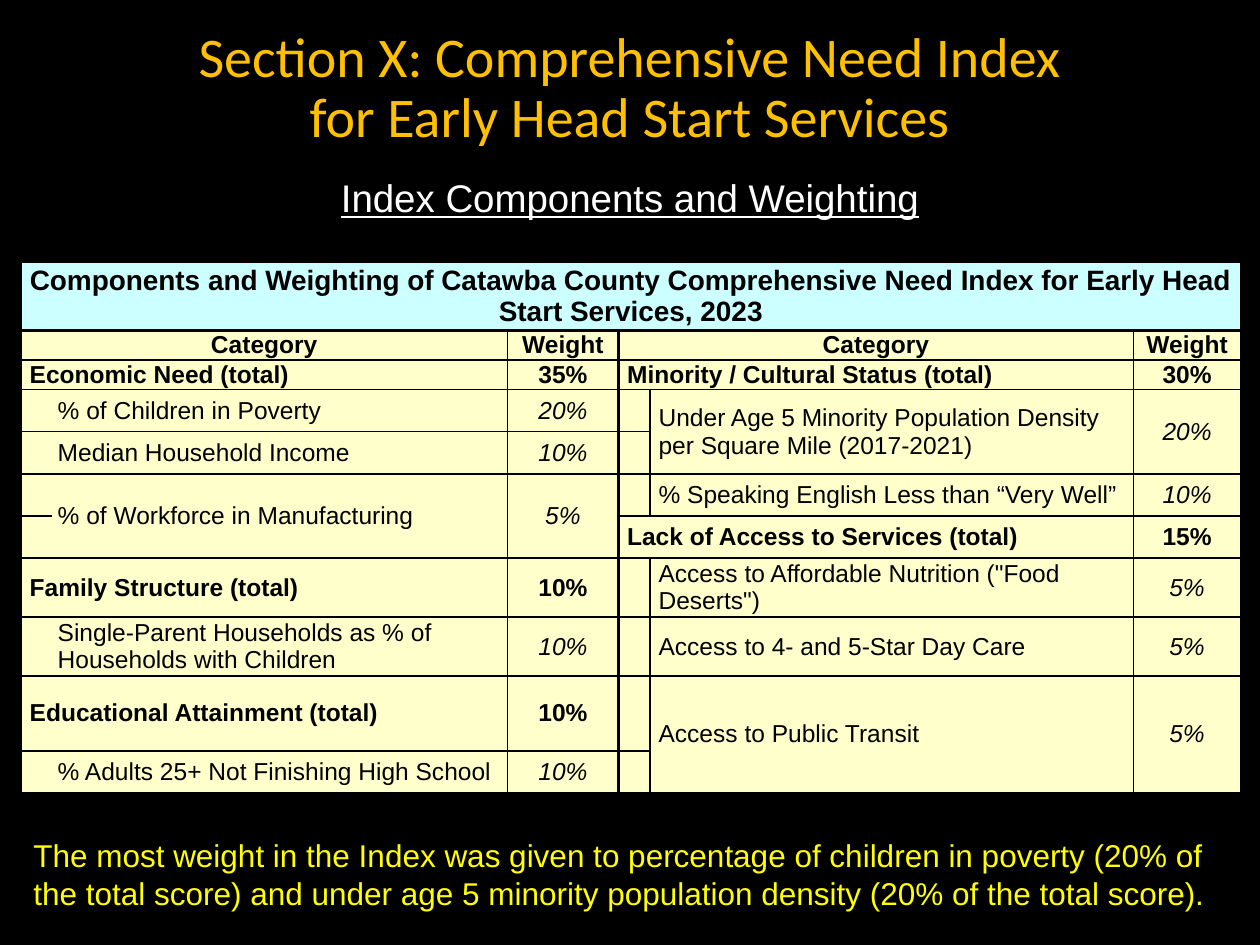
from lxml import etree
from pptx import Presentation
from pptx.dml.color import RGBColor
from pptx.enum.text import MSO_ANCHOR, MSO_AUTO_SIZE, PP_ALIGN
from pptx.oxml.ns import qn
from pptx.util import Pt

CENTER, LEFT = PP_ALIGN.CENTER, PP_ALIGN.LEFT
MIDDLE, TOP = MSO_ANCHOR.MIDDLE, MSO_ANCHOR.TOP
NO_FIT = MSO_AUTO_SIZE.NONE
TITLE_ONLY = 5
NO_TABLE_STYLE = "{2D5ABB26-0587-4C30-8999-92F81FD0307C}"

BLACK, WHITE, GOLD, YELLOW = "000000", "FFFFFF", "FFC000", "FFFF00"
PALE_BLUE, CREAM = "CCFFFF", "FFFFCC"
THIN, HEAVY = 1, 1.5

COLUMN_WIDTHS = [18, 260, 63.4, 18, 276.4, 61.2]
ROW_HEIGHTS = [38.9, 16.6, 16.6, 24, 24.4, 24, 24, 33.7, 33.7, 42.9, 24]
TABLE_TITLE = ("Components and Weighting of Catawba County Comprehensive Need Index "
               "for Early Head Start Services, 2023")

# Each entry: rows spanned, whether it is a group total, label, weight.
ECONOMIC_SIDE = [
    (1, True, "Economic Need (total)", "35%"),
    (1, False, "% of Children in Poverty", "20%"),
    (1, False, "Median Household Income", "10%"),
    (2, False, "% of Workforce in Manufacturing", "5%"),
    (1, True, "Family Structure (total)", "10%"),
    (1, False, "Single-Parent Households as % of Households with Children", "10%"),
    (1, True, "Educational Attainment (total)", "10%"),
    (1, False, "% Adults 25+ Not Finishing High School", "10%"),
]
ACCESS_SIDE = [
    (1, True, "Minority / Cultural Status (total)", "30%"),
    (2, False, "Under Age 5 Minority Population Density per Square Mile (2017-2021)", "20%"),
    (1, False, "% Speaking English Less than “Very Well”", "10%"),
    (1, True, "Lack of Access to Services (total)", "15%"),
    (1, False, "Access to Affordable Nutrition (\"Food Deserts\")", "5%"),
    (1, False, "Access to 4- and 5-Star Day Care", "5%"),
    (2, False, "Access to Public Transit", "5%"),
]


def color(value):
    return RGBColor.from_string(value)


def write_text(text_frame, text, font_color, alignment=LEFT, **font_format):
    paragraph = text_frame.paragraphs[0]
    paragraph.alignment = alignment
    run = paragraph.add_run()
    run.text = text
    run.font.color.rgb = color(font_color)
    for name, value in {"name": "Arial", **font_format}.items():
        setattr(run.font, name, value)
    return paragraph


def add_title(slide, left, top, width, height):
    title = slide.shapes.title
    title.left, title.top, title.width, title.height = map(Pt, (left, top, width, height))
    frame = title.text_frame
    frame.auto_size, frame.vertical_anchor = NO_FIT, MIDDLE
    paragraph = write_text(frame, "Section X: Comprehensive Need Index for Early Head Start Services",
                           GOLD, CENTER, name="Calibri", size=Pt(32))
    paragraph.line_spacing = 0.9


def add_text(slide, left, top, width, height, text, font_color, **options):
    box = slide.shapes.add_textbox(*map(Pt, (left, top, width, height)))
    box.text_frame.word_wrap = True
    box.text_frame.vertical_anchor = TOP
    write_text(box.text_frame, text, font_color, **options)


def format_cell(cell, borders, fill=CREAM, left_margin=5):
    margins = {"margin_left": left_margin, "margin_right": 5, "margin_top": 0, "margin_bottom": 0}
    for name, value in margins.items():
        setattr(cell, name, Pt(value))
    cell.vertical_anchor = MIDDLE
    properties = cell._tc.get_or_add_tcPr()
    for side in "LRTB":
        if side in borders:
            line = etree.SubElement(properties, qn(f"a:ln{side}"), w=str(int(Pt(borders[side]))))
            solid = etree.SubElement(line, qn("a:solidFill"))
            etree.SubElement(solid, qn("a:srgbClr"), val=BLACK)
    cell.fill.solid()
    cell.fill.fore_color.rgb = color(fill)


def fill_cell(cell, text, borders, alignment=CENTER, fill=CREAM, left_margin=5, size=14, **font_format):
    format_cell(cell, borders, fill, left_margin)
    write_text(cell.text_frame, text, BLACK, alignment, size=Pt(size), **font_format)


def merge(table, row, column, last_row, last_column):
    cell = table.cell(row, column)
    if (row, column) != (last_row, last_column):
        cell.merge(table.cell(last_row, last_column))
    return cell


def add_side(table, column, entries, item_margin):
    heading = {"T": HEAVY, "B": HEAVY}
    fill_cell(merge(table, 1, column, 1, column + 1), "Category",
              {**heading, "L": HEAVY, "R": THIN}, bold=True)
    fill_cell(table.cell(1, column + 2), "Weight", {**heading, "L": THIN, "R": HEAVY}, bold=True)

    row = 2
    following = entries[1:] + [(1, True, "", "")]
    for (span, is_total, label, weight), (_, next_is_total, _, _) in zip(entries, following):
        last_row = row + span - 1
        edges = {"T": HEAVY if is_total else THIN, "B": HEAVY if next_is_total else THIN}
        if is_total:
            fill_cell(merge(table, row, column, row, column + 1), label,
                      {**edges, "L": HEAVY, "R": THIN}, LEFT, bold=True)
        else:
            for indent_row in range(row, last_row + 1):
                indent_borders = {"L": HEAVY}
                if indent_row == row:
                    indent_borders["T"] = edges["T"]
                if indent_row == last_row:
                    indent_borders["B"] = edges["B"]
                format_cell(table.cell(indent_row, column), indent_borders)
            fill_cell(merge(table, row, column + 1, last_row, column + 1), label,
                      {**edges, "R": THIN}, LEFT, left_margin=item_margin)
        fill_cell(merge(table, row, column + 2, last_row, column + 2), weight,
                  {**edges, "L": THIN, "R": HEAVY}, bold=is_total, italic=not is_total)
        row = last_row + 1


def add_index_table(slide, left, top):
    frame = slide.shapes.add_table(len(ROW_HEIGHTS), len(COLUMN_WIDTHS), Pt(left), Pt(top),
                                   Pt(sum(COLUMN_WIDTHS)), Pt(sum(ROW_HEIGHTS)))
    table = frame.table
    table.first_row = table.horz_banding = False
    table._tbl.tblPr.find(qn("a:tableStyleId")).text = NO_TABLE_STYLE
    for column, width in zip(table.columns, COLUMN_WIDTHS):
        column.width = Pt(width)
    for row, height in zip(table.rows, ROW_HEIGHTS):
        row.height = Pt(height)

    fill_cell(merge(table, 0, 0, 0, len(COLUMN_WIDTHS) - 1), TABLE_TITLE,
              {"L": THIN, "R": THIN, "T": THIN, "B": HEAVY}, fill=PALE_BLUE, size=16, bold=True)
    add_side(table, 0, ECONOMIC_SIDE, item_margin=3)
    add_side(table, 3, ACCESS_SIDE, item_margin=5)


def main():
    presentation = Presentation()
    presentation.slide_width, presentation.slide_height = Pt(720), Pt(540)
    slide = presentation.slides.add_slide(presentation.slide_layouts[TITLE_ONLY])
    slide.background.fill.solid()
    slide.background.fill.fore_color.rgb = color(BLACK)

    add_title(slide, 96, 6, 528, 90)
    add_text(slide, 42, 96, 636, 34, "Index Components and Weighting", WHITE,
             alignment=CENTER, size=Pt(22), underline=True)
    add_index_table(slide, 12, 150)
    add_text(slide, 12, 474, 690, 51,
             "The most weight in the Index was given to percentage of children in poverty "
             "(20% of the total score) and under age 5 minority population density "
             "(20% of the total score).", YELLOW, size=Pt(18))
    presentation.save("out.pptx")


if __name__ == "__main__":
    main()
